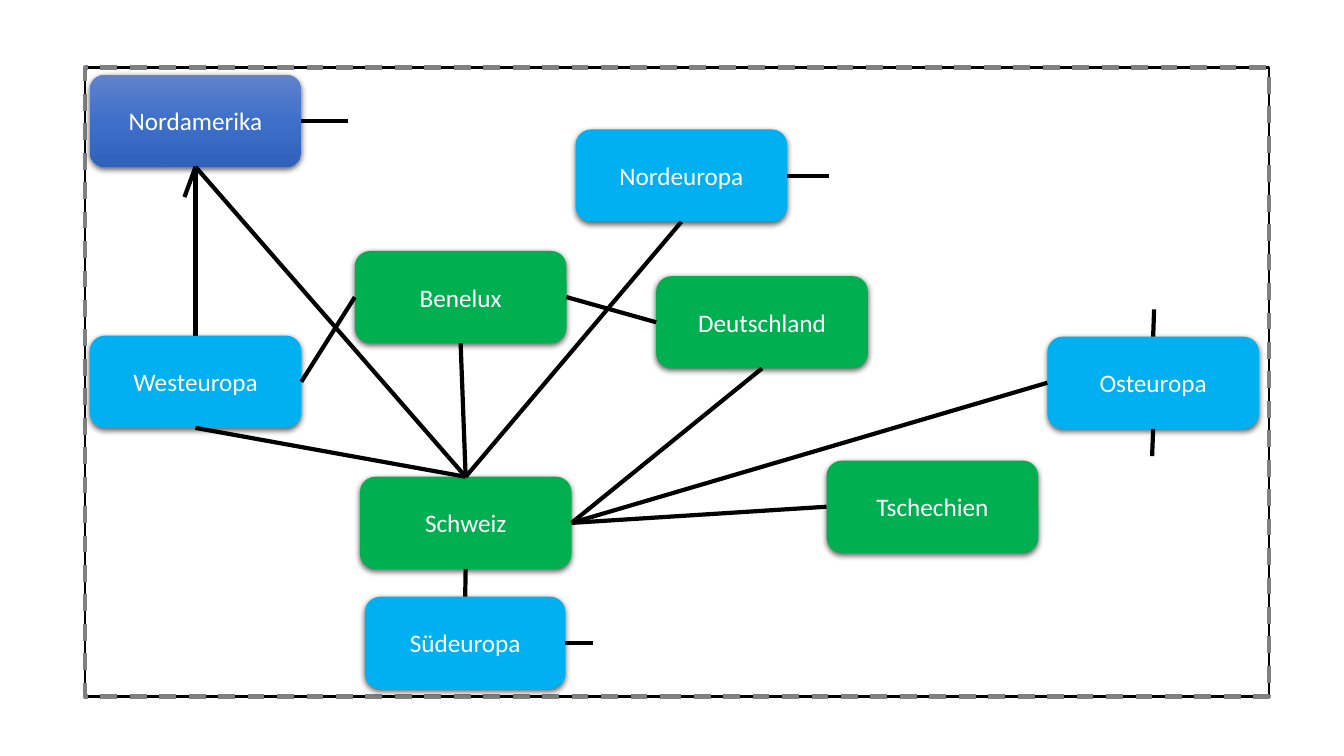
from copy import deepcopy

from lxml.etree import SubElement
from pptx import Presentation
from pptx.dml.color import RGBColor
from pptx.enum.dml import MSO_LINE
from pptx.enum.shapes import MSO_CONNECTOR, MSO_SHAPE
from pptx.enum.text import MSO_ANCHOR, PP_ALIGN
from pptx.oxml.ns import qn
from pptx.util import Inches, Pt

COLORS = {
    "green": "00B050", "sky": "00B0F0", "white": "FFFFFF", "black": "000000",
    "gray": "808080", "top": "6183CB", "middle": "3E70CA", "bottom": "3062BB",
}
RGB = {name: RGBColor.from_string(value) for name, value in COLORS.items()}
TOP, LEFT, BOTTOM, RIGHT = range(4)

deck = Presentation()
deck.slide_width, deck.slide_height = Inches(13.33), Inches(7.5)
page = deck.slides.add_slide(deck.slide_layouts[6])

# Grid of 40 columns and 30 rows
COLUMN, ROW = deck.slide_width / 40, deck.slide_height / 30
BOX_WIDTH, BOX_HEIGHT = 6.3, 3.66


def add_block(kind, column, row, columns, rows):
    """Add a shape without shadow, placed in grid columns and rows."""
    block = page.shapes.add_shape(
        kind, round(column * COLUMN), round(row * ROW),
        round(columns * COLUMN), round(rows * ROW))
    block.shadow.inherit = False
    return block


def add_link(start, start_side, end=None, end_side=None, reach=(0, 0)):
    """Join two boxes, or draw a loose end that reaches (columns, rows) away."""
    link = page.shapes.add_connector(MSO_CONNECTOR.STRAIGHT, 0, 0, 0, 0)
    link.begin_connect(start, start_side)
    if end is not None:
        link.end_connect(end, end_side)
    else:
        link.end_x = link.begin_x + round(reach[0] * COLUMN)
        link.end_y = link.begin_y + round(reach[1] * ROW)
    link.line.color.rgb = RGB["black"]
    link.line.width = Pt(3)
    SubElement(link._element.spPr, qn("a:effectLst"))


for color, width, dash in (("black", 1.5, None), ("gray", 3, MSO_LINE.DASH)):
    frame = add_block(MSO_SHAPE.RECTANGLE, 2.52, 2.68, 35.25, 24.96)
    frame.fill.background()
    frame.line.color.rgb = RGB[color]
    frame.line.width = Pt(width)
    frame.line.dash_style = dash

regions = [
    ("Nordamerika", 2.67, 2.96, BOX_WIDTH, None),
    ("Westeuropa", 2.67, 13.32, BOX_WIDTH, "sky"),
    ("Nordeuropa", 17.13, 5.14, BOX_WIDTH, "sky"),
    ("Osteuropa", 31.17, 13.36, BOX_WIDTH, "sky"),
    ("Südeuropa", 10.86, 23.68, 5.97, "sky"),
    ("Benelux", 10.56, 9.96, BOX_WIDTH, "green"),
    ("Deutschland", 19.53, 10.96, BOX_WIDTH, "green"),
    ("Schweiz", 10.71, 18.92, BOX_WIDTH, "green"),
    ("Tschechien", 24.6, 18.28, BOX_WIDTH, "green"),
]
boxes = {}
for name, column, row, width, color in regions:
    box = add_block(MSO_SHAPE.ROUNDED_RECTANGLE, column, row, width, BOX_HEIGHT)
    boxes[name] = box
    box.line.fill.background()
    properties = box._element.spPr
    if color:
        box.fill.solid()
        box.fill.fore_color.rgb = RGB[color]
    else:
        box.fill.gradient()
        box.fill.gradient_angle = 270
        stops = properties.find(".//" + qn("a:gsLst"))
        stops.append(deepcopy(stops[0]))
        shades = (("top", 0), ("middle", 0.5), ("bottom", 1))
        for stop, (shade, position) in zip(box.fill.gradient_stops, shades):
            stop.color.rgb = RGB[shade]
            stop.position = position

    shadow = SubElement(
        properties.find(qn("a:effectLst")), qn("a:outerShdw"),
        blurRad=str(Pt(4.5)), dist=str(Pt(1.5)), dir="5400000",
        algn="ctr", rotWithShape="0")
    shade = SubElement(shadow, qn("a:srgbClr"), val=COLORS["black"])
    SubElement(shade, qn("a:alpha"), val="63000")

    box.text_frame.vertical_anchor = MSO_ANCHOR.MIDDLE
    para = box.text_frame.paragraphs[0]
    para.alignment = PP_ALIGN.CENTER
    span = para.add_run()
    span.text = name
    span.font.name = "Calibri"
    span.font.size = Pt(18)
    span.font.color.rgb = RGB["white"]

for start, start_side, end, end_side in (
    ("Nordamerika", BOTTOM, "Westeuropa", TOP),
    ("Nordamerika", BOTTOM, "Schweiz", TOP),
    ("Westeuropa", BOTTOM, "Schweiz", TOP),
    ("Nordeuropa", BOTTOM, "Schweiz", TOP),
    ("Benelux", BOTTOM, "Schweiz", TOP),
    ("Benelux", LEFT, "Westeuropa", RIGHT),
    ("Deutschland", LEFT, "Benelux", RIGHT),
    ("Schweiz", RIGHT, "Deutschland", BOTTOM),
    ("Schweiz", RIGHT, "Tschechien", LEFT),
    ("Schweiz", RIGHT, "Osteuropa", LEFT),
    ("Schweiz", BOTTOM, "Südeuropa", TOP),
):
    add_link(boxes[start], start_side, boxes[end], end_side)

for name, side, reach in (
    ("Nordamerika", RIGHT, (1.38, 0)),
    ("Nordamerika", BOTTOM, (-0.33, 1.2)),
    ("Nordeuropa", RIGHT, (1.23, 0)),
    ("Osteuropa", TOP, (0.03, -1.08)),
    ("Osteuropa", BOTTOM, (-0.03, 1.08)),
    ("Südeuropa", RIGHT, (0.81, 0)),
):
    add_link(boxes[name], side, reach=reach)

deck.save("out.pptx")
